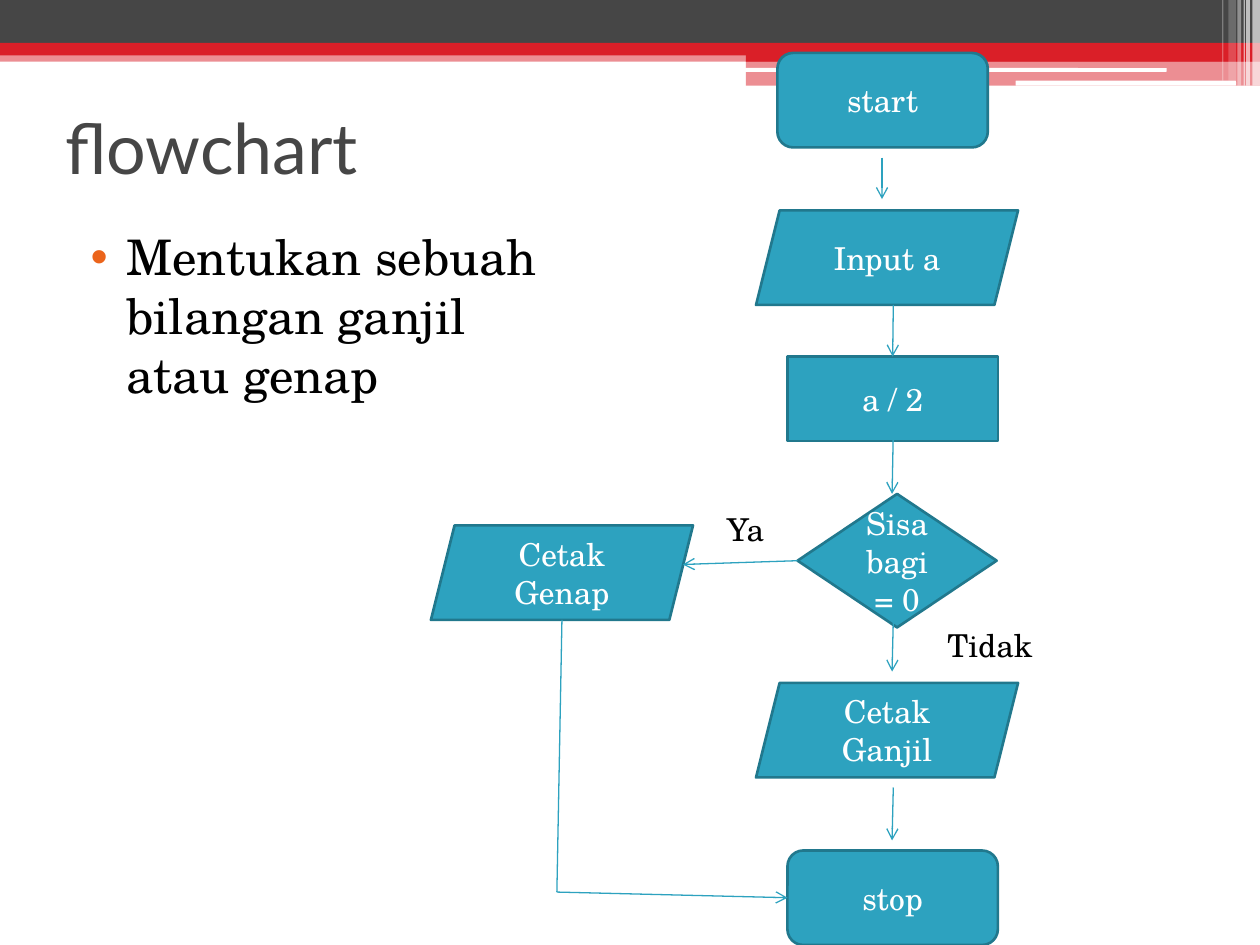
from lxml import etree
from pptx import Presentation
from pptx.dml.color import RGBColor
from pptx.enum.shapes import MSO_CONNECTOR, MSO_SHAPE as Shape
from pptx.enum.text import MSO_ANCHOR as Anchor, MSO_AUTO_SIZE as AutoSize, PP_ALIGN as Align
from pptx.oxml.ns import qn
from pptx.util import Inches, Pt

COLORS = {
    "white": "FFFFFF", "black": "000000", "gray": "464646", "red": "DA1F28",
    "teal": "2DA2BF", "edge": "21788D", "bullet": "EB641B",
}
TITLE_FONT, BODY_FONT = "Lato", "TeX Gyre Schola"
TOP, LEFT = 0, 1  # connection sites


def rgb(name):
    return RGBColor.from_string(COLORS[name])


def inches(values):
    return [Inches(value) for value in values]


class FlowSlide:
    def __init__(self, deck):
        self.page = deck.slides.add_slide(deck.slide_layouts[1])
        self.shapes = self.page.shapes

    def add_span(self, para, text, size, color, font=BODY_FONT):
        span = para.add_run()
        span.text = text
        span.font.size = Pt(size)
        span.font.name = font
        span.font.color.rgb = rgb(color)

    def place(self, item, area):
        item.left, item.top, item.width, item.height = inches(area)
        item.text_frame.auto_size = AutoSize.NONE
        return item.text_frame

    def title(self, text, area):
        frame = self.place(self.shapes.title, area)
        frame.vertical_anchor = Anchor.MIDDLE
        para = frame.paragraphs[0]
        para.alignment = Align.LEFT
        self.add_span(para, text, 40, "gray", TITLE_FONT)

    def bullet(self, text, area):
        para = self.place(self.page.placeholders[1], area).paragraphs[0]
        para.space_before = Pt(3)
        self.add_span(para, text, 28, "black")
        props = para._p.get_or_add_pPr()
        props.set("marL", str(Inches(0.4)))
        props.set("indent", str(Inches(-0.28)))
        color = etree.SubElement(props, qn("a:buClr"))
        etree.SubElement(color, qn("a:srgbClr"), val=COLORS["bullet"])
        etree.SubElement(props, qn("a:buFont"), typeface="Arial")
        etree.SubElement(props, qn("a:buChar"), char="•")

    def filled(self, kind, area, color):
        box = self.shapes.add_shape(kind, *inches(area))
        box.shadow.inherit = False
        box.fill.solid()
        box.fill.fore_color.rgb = rgb(color)
        return box

    def band(self, area, color, opacity=100, kind=Shape.RECTANGLE):
        box = self.filled(kind, area, color)
        box.line.fill.background()
        if opacity < 100:
            tint = box._element.spPr.find(".//" + qn("a:srgbClr"))
            etree.SubElement(tint, qn("a:alpha"), val=str(opacity * 1000))

    def step(self, kind, text, area):
        box = self.filled(kind, area, "teal")
        box.line.color.rgb = rgb("edge")
        box.line.width = Pt(1.5)
        frame = box.text_frame
        frame.word_wrap = True
        frame.vertical_anchor = Anchor.MIDDLE
        para = frame.paragraphs[0]
        para.alignment = Align.CENTER
        self.add_span(para, text, 18, "white")
        return box

    def label(self, text, area):
        frame = self.shapes.add_textbox(*inches(area)).text_frame
        frame.word_wrap = True
        frame.auto_size = AutoSize.SHAPE_TO_FIT_TEXT
        self.add_span(frame.paragraphs[0], text, 18, "black")

    def line(self, start, end, source=None, target=None, arrow=True):
        # source and target are (shape, connection site) pairs
        link = self.shapes.add_connector(MSO_CONNECTOR.STRAIGHT, *inches(start + end))
        if source:
            link.begin_connect(*source)
        if target:
            link.end_connect(*target)
        link.line.color.rgb = rgb("teal")
        link.line.width = Pt(0.75)
        props = link._element.spPr
        if arrow:
            etree.SubElement(props.find(qn("a:ln")), qn("a:tailEnd"), type="arrow")
        etree.SubElement(props, qn("a:effectLst"))


def main():
    deck = Presentation()
    deck.slide_width, deck.slide_height = Inches(10), Inches(7.5)
    slide = FlowSlide(deck)

    # Header bands
    slide.band((0, 0.4, 10, 0.09), "red", 50)
    slide.band((0, 0, 10, 0.34), "gray")
    slide.band((0, 0.34, 10, 0.1), "red")
    slide.band((5.92, 0.39, 4.08, 0.1), "red")
    slide.band((5.92, 0.48, 4.08, 0.2), "red", 50)
    slide.band((5.91, 0.54, 3.35, 0.03), "white", kind=Shape.ROUNDED_RECTANGLE)
    slide.band((8.06, 0.64, 1.75, 0.04), "white", kind=Shape.ROUNDED_RECTANGLE)

    # Pale stripes at the right edge
    for left, width, height, opacity in (
        (9.94, 0.06, 0.68, 65), (9.89, 0.03, 0.68, 65), (9.87, 0.01, 0.68, 60),
        (9.82, 0.03, 0.68, 40), (9.75, 0.06, 0.64, 20), (9.7, 0.01, 0.64, 30),
    ):
        slide.band((left, 0, width, height), "white", opacity)

    # Title and task
    slide.title("flowchart", (0.42, 0.58, 9, 1.17))
    slide.bullet("Mentukan sebuah bilangan ganjil atau genap", (0.5, 1.75, 3.92, 5.33))

    # Flowchart steps
    slide.step(Shape.ROUNDED_RECTANGLE, "start", (6.17, 0.42, 1.67, 0.75))
    slide.step(Shape.PARALLELOGRAM, "Input a", (6, 1.67, 2.08, 0.75))
    divide = slide.step(Shape.RECTANGLE, "a / 2", (6.25, 2.83, 1.67, 0.67))
    decision = slide.step(Shape.FLOWCHART_DECISION, "Sisa bagi = 0", (6.33, 3.92, 1.58, 1.06))
    slide.step(Shape.PARALLELOGRAM, "Cetak Genap", (3.42, 4.17, 2.08, 0.75))
    slide.step(Shape.PARALLELOGRAM, "Cetak Ganjil", (6, 5.42, 2.08, 0.75))
    stop = slide.step(Shape.ROUNDED_RECTANGLE, "stop", (6.25, 6.75, 1.67, 0.75))

    # Main path downwards
    slide.line((7, 1.25), (7, 1.58))
    slide.line((7.09, 2.42), (7.08, 2.83), target=(divide, TOP))
    for start, end in ((3.42, 3.92), (4.92, 5.33), (6.25, 6.67)):
        slide.line((7.09, start), (7.08, end))

    # Branch for even numbers
    slide.line((6.33, 4.45), (5.42, 4.48), source=(decision, LEFT))
    slide.line((4.46, 4.92), (4.42, 7.08), arrow=False)
    slide.line((4.42, 7.08), (6.25, 7.12), target=(stop, LEFT))

    # Branch labels
    slide.label("Ya", (5.67, 4, 0.67, 0.4))
    slide.label("Tidak", (7.42, 4.92, 0.92, 0.4))

    deck.save("out.pptx")


if __name__ == "__main__":
    main()
